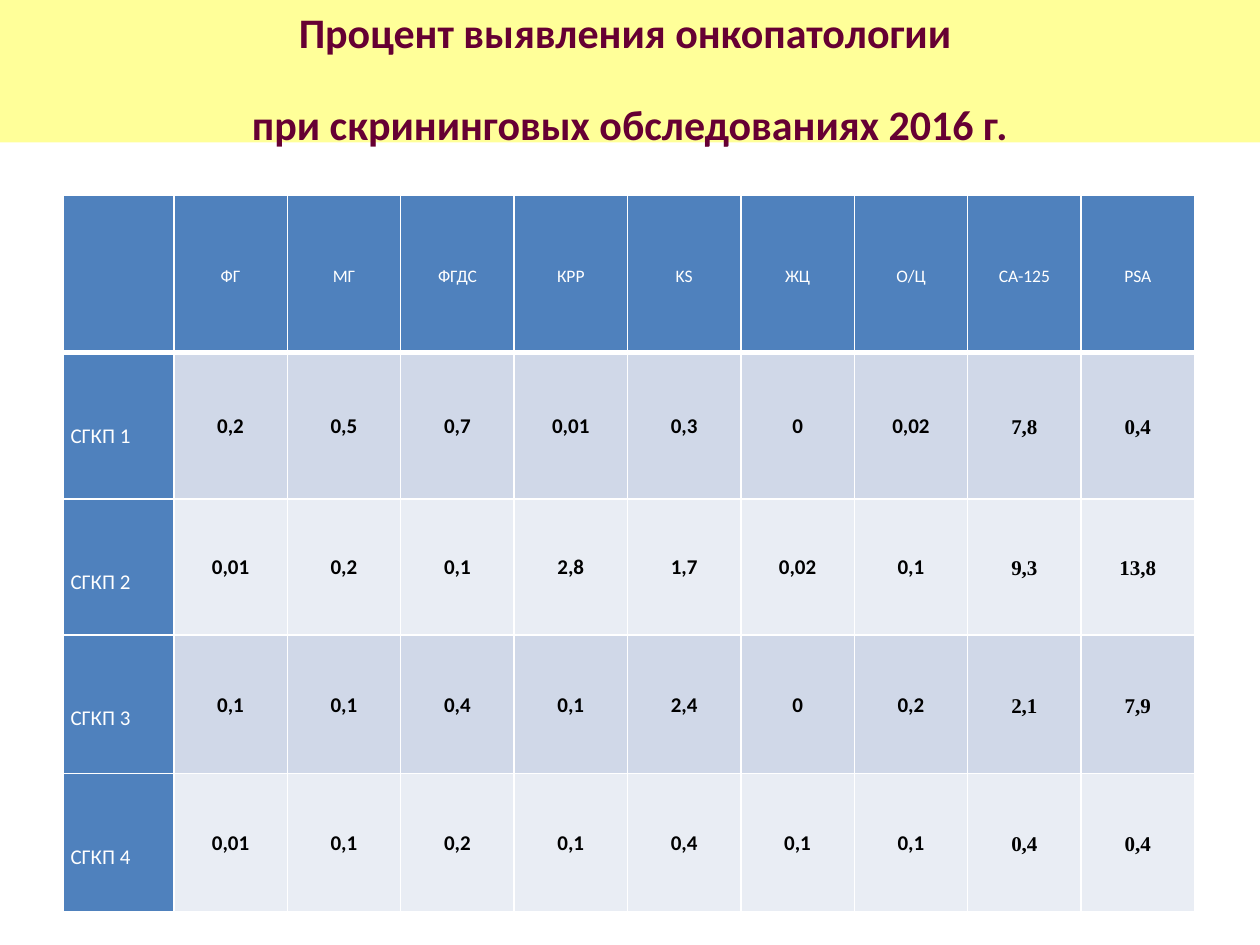
from lxml import etree
from pptx import Presentation, util as u
from pptx.dml.color import RGBColor
from pptx.enum import shapes, text
from pptx.oxml import ns

# Content
TITLE = ["Процент выявления онкопатологии ",
         "при скрининговых обследованиях 2016 г."]
TESTS = ["ФГ", "МГ", "ФГДС", "КРР", "KS", "ЖЦ", "О/Ц", "СA-125", "PSA"]
CLINICS = {
    "СГКП 1": ["0,2", "0,5", "0,7", "0,01", "0,3", "0", "0,02", "7,8", "0,4"],
    "СГКП 2": ["0,01", "0,2", "0,1", "2,8", "1,7", "0,02", "0,1", "9,3", "13,8"],
    "СГКП 3": ["0,1", "0,1", "0,4", "0,1", "2,4", "0", "0,2", "2,1", "7,9"],
    "СГКП 4": ["0,01", "0,1", "0,2", "0,1", "0,4", "0,1", "0,1", "0,4", "0,4"],
}

# Layout and colours
COLUMN_WIDTHS = [0.88] + [0.9] * len(TESTS)
ROW_HEIGHTS = [1.25, 1.16, 1.08, 1.1, 1.1]
SERIF_FROM = 8  # the tumour marker columns use a serif face
YELLOW = RGBColor(0xFF, 0xFF, 0x99)
MAROON = RGBColor(0x66, 0x00, 0x33)
BLUE = RGBColor(0x4F, 0x81, 0xBD)
BANDS = [RGBColor(0xD0, 0xD8, 0xE8), RGBColor(0xE9, 0xED, 0xF4)]
WHITE = RGBColor(0xFF, 0xFF, 0xFF)
BLACK = RGBColor(0x00, 0x00, 0x00)


def write(frame, lines, size=12, color=WHITE, font="Calibri", bold=False,
          align=text.PP_ALIGN.CENTER, left=0, before=12, spacing=None):
    for number, line in enumerate(lines):
        para = frame.paragraphs[0] if number == 0 else frame.add_paragraph()
        para.alignment = align
        para.space_before, para.space_after = u.Pt(before), u.Pt(11.8)
        if spacing:
            para.line_spacing = u.Pt(spacing)
        properties = para._p.get_or_add_pPr()
        properties.set("marL", str(u.Inches(left)))
        properties.set("indent", str(u.Inches(-0.21)))
        span = para.add_run()
        span.text = line
        span.font.size, span.font.bold = u.Pt(size), bold
        span.font.name = font
        span.font.color.rgb = color


def style_cell(cell, fill, side, top=0, anchor=text.MSO_ANCHOR.MIDDLE, bottom_line=1):
    cell.margin_left = cell.margin_right = u.Inches(side)
    cell.margin_top, cell.margin_bottom = u.Inches(top), 0
    cell.vertical_anchor = anchor
    properties = cell._tc.get_or_add_tcPr()
    for edge, width in (("L", 1), ("R", 1), ("T", 1), ("B", bottom_line)):
        line = etree.SubElement(properties, ns.qn(f"a:ln{edge}"), w=str(u.Pt(width)))
        solid = etree.SubElement(line, ns.qn("a:solidFill"))
        etree.SubElement(solid, ns.qn("a:srgbClr"), val=str(WHITE))
    cell.fill.solid()
    cell.fill.fore_color.rgb = fill


deck = Presentation()
deck.slide_width, deck.slide_height = u.Inches(10), u.Inches(7.5)
page = deck.slides.add_slide(deck.slide_layouts[6])

# Title band
band = page.shapes.add_shape(shapes.MSO_SHAPE.RECTANGLE, 0, 0,
                             deck.slide_width, u.Inches(1.13))
band.shadow.inherit = False
band.fill.solid()
band.fill.fore_color.rgb = YELLOW
band.line.fill.background()
band.text_frame.word_wrap = True
band.text_frame.vertical_anchor = text.MSO_ANCHOR.TOP
write(band.text_frame, TITLE, size=24, color=MAROON, bold=True, left=0.03)

# Table grid
table = page.shapes.add_table(
    len(ROW_HEIGHTS), len(COLUMN_WIDTHS), u.Inches(0.5), u.Inches(1.55),
    u.Inches(sum(COLUMN_WIDTHS)), u.Inches(sum(ROW_HEIGHTS))).table
for column, width in zip(table.columns, COLUMN_WIDTHS):
    column.width = u.Inches(width)
for row, height in zip(table.rows, ROW_HEIGHTS):
    row.height = u.Inches(height)

# Header row
for index, name in enumerate([""] + TESTS):
    cell = table.cell(0, index)
    style_cell(cell, BLUE, 0.06, bottom_line=3)
    if name:
        write(cell.text_frame, [name], size=10, left=0.08, spacing=15.5)

# Clinic rows
for row, (clinic, values) in enumerate(CLINICS.items(), start=1):
    label = table.cell(row, 0)
    style_cell(label, BLUE, 0.06, top=0.55, anchor=text.MSO_ANCHOR.TOP)
    write(label.text_frame, [clinic], align=text.PP_ALIGN.LEFT, before=0, spacing=15.5)
    for column, value in enumerate(values, start=1):
        cell = table.cell(row, column)
        style_cell(cell, BANDS[(row - 1) % 2], 0.07)
        write(cell.text_frame, [value], color=BLACK, bold=True, spacing=15.5,
              font="Times New Roman" if column >= SERIF_FROM else "Calibri")

deck.save("out.pptx")
